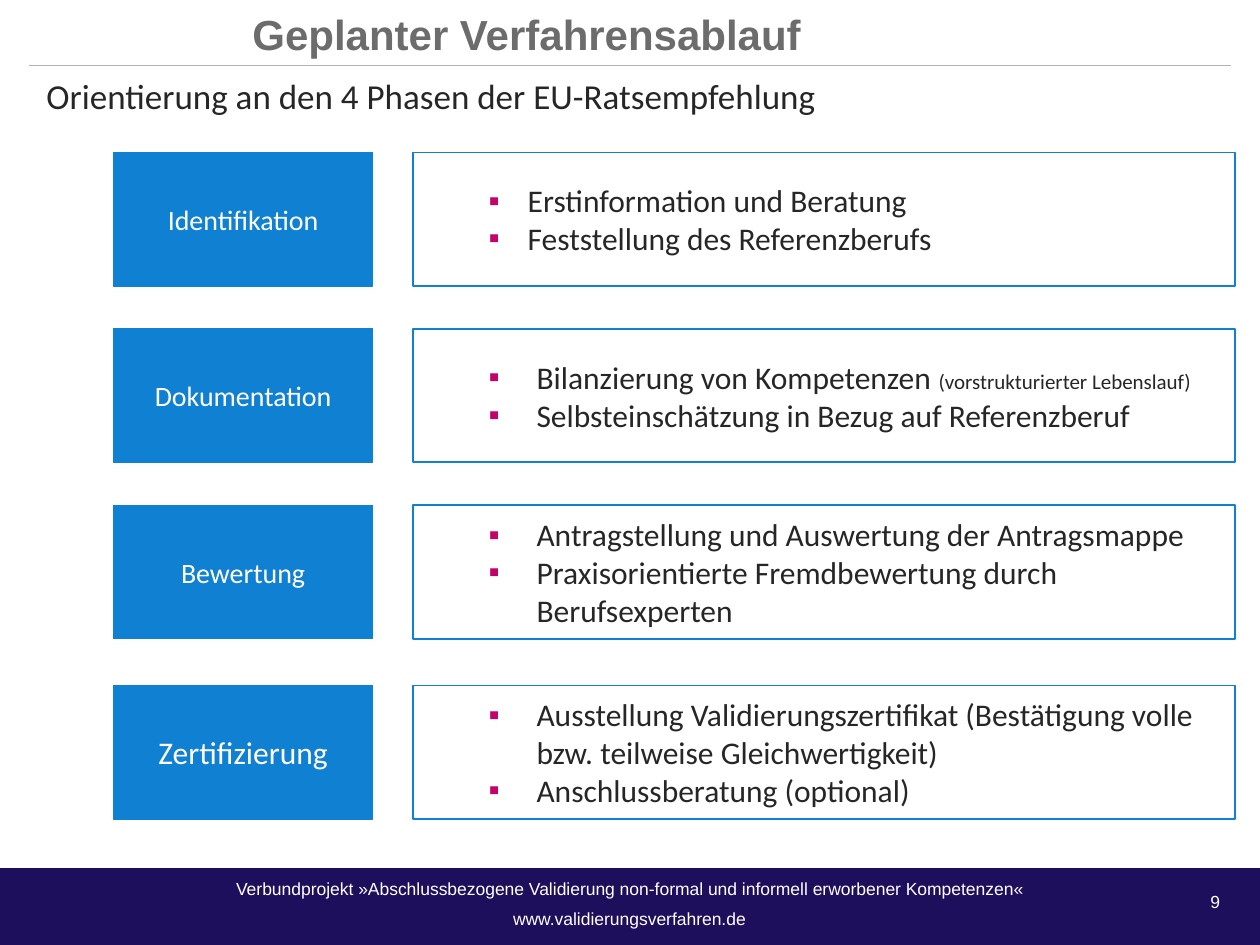
import pptx
import pptx.util
import pptx.dml.color
import pptx.enum.shapes
import pptx.enum.text
import pptx.oxml
import pptx.oxml.ns

COLORS = {
    "navy": "1D0F5B",
    "blue": "1080D2",
    "rule": "B3B3B3",
    "title": "6C6C6C",
    "text": "262626",
    "bullet": "C5016B",
    "white": "FFFFFF",
}
ALIGN = pptx.enum.text.PP_ALIGN
MIDDLE = pptx.enum.text.MSO_ANCHOR.MIDDLE
RECTANGLE = pptx.enum.shapes.MSO_SHAPE.RECTANGLE

presentation = pptx.Presentation()
presentation.slide_width = pptx.util.Inches(10)
presentation.slide_height = pptx.util.Inches(7.5)
column = presentation.slide_width / 100
row = presentation.slide_height / 75
slide = presentation.slides.add_slide(presentation.slide_layouts[5])


def cells(left, top, width, height):
    return [round(left * column), round(top * row), round(width * column), round(height * row)]


def add_text(paragraph, text, size, font, color, bold=False):
    run = paragraph.add_run()
    run.text = text
    run.font.size = pptx.util.Pt(size)
    run.font.name = font
    run.font.bold = bold
    run.font.color.rgb = pptx.dml.color.RGBColor.from_string(COLORS[color])


footer_bar = slide.shapes.add_shape(RECTANGLE, *cells(0, 68.9, 100, 6.1))
footer_bar.shadow.inherit = False
footer_bar.fill.solid()
footer_bar.fill.fore_color.rgb = pptx.dml.color.RGBColor.from_string(COLORS["navy"])
footer_bar.line.fill.background()

footer = slide.shapes.add_textbox(*cells(0.8, 69.2, 98.3, 5.2)).text_frame
footer.word_wrap = True
footer_lines = [
    "Verbundprojekt »Abschlussbezogene Validierung non-formal und informell erworbener Kompetenzen«",
    "www.validierungsverfahren.de",
]
for index, line in enumerate(footer_lines):
    paragraph = footer.add_paragraph() if index else footer.paragraphs[0]
    paragraph.alignment = ALIGN.CENTER
    paragraph.space_before = pptx.util.Pt(5 * index)
    add_text(paragraph, line, 10, "Arial", "white")

page_number = slide.shapes.add_textbox(*cells(94.1, 70.2, 4.7, 2.7)).text_frame
page_number.word_wrap = True
page_number.paragraphs[0].alignment = ALIGN.CENTER
add_text(page_number.paragraphs[0], "9", 10, "Arial", "white")

left, top, width, height = cells(2.3, 5.2, 95.4, 0)
rule = slide.shapes.add_connector(
    pptx.enum.shapes.MSO_CONNECTOR.STRAIGHT, left, top, left + width, top
)
rule.line.color.rgb = pptx.dml.color.RGBColor.from_string(COLORS["rule"])
rule.line.width = pptx.util.Pt(0.75)
pptx.oxml.ns.qn("a:effectLst")
rule.element.spPr.append(pptx.oxml.parse_xml(
    f'<a:effectLst {pptx.oxml.ns.nsdecls("a")}/>'
))

title = slide.shapes.title
title.left, title.top, title.width, title.height = cells(0, 0.2, 83.6, 5)
title.text_frame.vertical_anchor = MIDDLE
title.text_frame.paragraphs[0].alignment = ALIGN.CENTER
add_text(title.text_frame.paragraphs[0], "Geplanter Verfahrensablauf", 24, "Arial", "title", True)

subtitle = slide.shapes.add_textbox(*cells(2.7, 4.4, 96.9, 5.4)).text_frame
subtitle.word_wrap = True
subtitle.paragraphs[0].line_spacing = 1.3
add_text(
    subtitle.paragraphs[0],
    "Orientierung an den 4 Phasen der EU-Ratsempfehlung", 20, "Calibri", "text",
)

phases = [
    ("Identifikation", 16, 12.1, 0.81, 0.31, [
        [("Erstinformation und Beratung", 18)],
        [("Feststellung des Referenzberufs", 18)],
    ]),
    ("Dokumentation", 16, 26.1, 0.88, 0.38, [
        [("Bilanzierung von Kompetenzen ", 18), ("(vorstrukturierter Lebenslauf)", 12)],
        [("Selbsteinschätzung in Bezug auf Referenzberuf", 18)],
    ]),
    ("Bewertung", 16, 40.1, 0.88, 0.38, [
        [("Antragstellung und Auswertung der Antragsmappe", 18)],
        [("Praxisorientierte Fremdbewertung durch Berufsexperten", 18)],
    ]),
    ("Zertifizierung", 18, 54.4, 0.88, 0.38, [
        [("Ausstellung Validierungszertifikat (Bestätigung volle bzw. teilweise Gleichwertigkeit)", 18)],
        [("Anschlussberatung (optional)", 18)],
    ]),
]
for name, name_size, top, margin, hanging, steps in phases:
    phase_box = slide.shapes.add_shape(RECTANGLE, *cells(9, top, 20.6, 10.6))
    steps_box = slide.shapes.add_shape(RECTANGLE, *cells(32.8, top, 65.2, 10.6))
    for box, line_width in ((phase_box, 0.75), (steps_box, 1)):
        box.shadow.inherit = False
        box.line.color.rgb = pptx.dml.color.RGBColor.from_string(COLORS["blue"])
        box.line.width = pptx.util.Pt(line_width)
        box.text_frame.word_wrap = True
        box.text_frame.vertical_anchor = MIDDLE
    phase_box.fill.solid()
    phase_box.fill.fore_color.rgb = pptx.dml.color.RGBColor.from_string(COLORS["blue"])
    steps_box.fill.background()

    phase_box.text_frame.paragraphs[0].alignment = ALIGN.CENTER
    add_text(phase_box.text_frame.paragraphs[0], name, name_size, "Calibri", "white")

    for index, step in enumerate(steps):
        frame = steps_box.text_frame
        paragraph = frame.add_paragraph() if index else frame.paragraphs[0]
        paragraph.alignment = ALIGN.LEFT
        paragraph.level = 1
        properties = paragraph._p.get_or_add_pPr()
        properties.set("marL", str(pptx.util.Inches(margin)))
        properties.set("indent", str(-pptx.util.Inches(hanging)))
        namespace = pptx.oxml.ns.nsdecls("a")
        properties.append(pptx.oxml.parse_xml(
            f'<a:buClr {namespace}><a:srgbClr val="{COLORS["bullet"]}"/></a:buClr>'
        ))
        properties.append(pptx.oxml.parse_xml(f'<a:buFont {namespace} typeface="Arial"/>'))
        properties.append(pptx.oxml.parse_xml(f'<a:buChar {namespace} char="▪"/>'))
        for text, size in step:
            add_text(paragraph, text, size, "Calibri", "text")

presentation.save("out.pptx")
